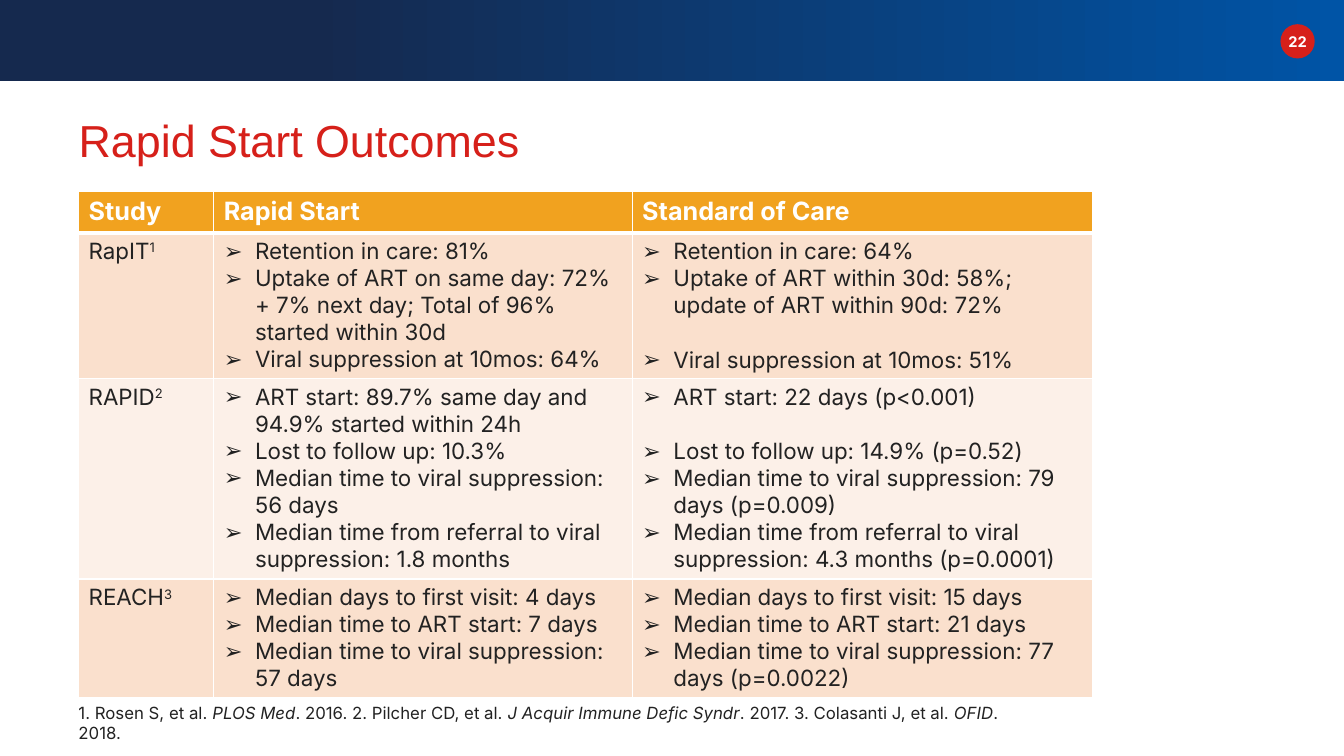
from lxml import etree
from pptx import Presentation
from pptx.dml.color import RGBColor
from pptx.enum.shapes import MSO_SHAPE
from pptx.enum.text import MSO_ANCHOR, PP_ALIGN
from pptx.oxml import parse_xml
from pptx.oxml.ns import nsdecls, qn
from pptx.util import Inches, Pt

RECT, OVAL = MSO_SHAPE.RECTANGLE, MSO_SHAPE.OVAL
MIDDLE, CENTER = MSO_ANCHOR.MIDDLE, PP_ALIGN.CENTER

RED, WHITE, INK, GOLD = "D6201A", "FFFFFF", "222222", "F1A21F"
BANDS = ["FAE0CD", "FCF0E8"]
STOPS = [(0.23, "15294E"), (1, "0054A6")]
TITLE = "Rapid Start Outcomes"
HEADS = ["Study", "Rapid Start", "Standard of Care"]
COLS = [1.34, 4.15, 4.57]
ROWS = [0.41, 1.44, 1.99, 1.17]
LINE = 19.5

STUDIES = [
    ("RapIT", "1",
     ["Retention in care: 81%",
      "Uptake of ART on same day: 72% + 7% next day; Total of 96% started within 30d",
      "Viral suppression at 10mos: 64%"],
     ["Retention in care: 64%",
      "Uptake of ART within 30d: 58%; update of ART within 90d: 72%",
      "Viral suppression at 10mos: 51%"]),
    ("RAPID", "2",
     ["ART start: 89.7% same day and 94.9% started within 24h",
      "Lost to follow up: 10.3%",
      "Median time to viral suppression: 56 days",
      "Median time from referral to viral suppression: 1.8 months"],
     ["ART start: 22 days (p<0.001)",
      "Lost to follow up: 14.9% (p=0.52)",
      "Median time to viral suppression: 79 days (p=0.009)",
      "Median time from referral to viral suppression: 4.3 months (p=0.0001)"]),
    ("REACH", "3",
     ["Median days to first visit: 4 days",
      "Median time to ART start: 7 days",
      "Median time to viral suppression: 57 days"],
     ["Median days to first visit: 15 days",
      "Median time to ART start: 21 days",
      "Median time to viral suppression: 77 days (p=0.0022)"]),
]
GAPS = {"Viral suppression at 10mos: 51%", "Lost to follow up: 14.9% (p=0.52)"}

CITES = [("1. Rosen S, et al. ", False), ("PLOS Med", True),
         (". 2016. 2. Pilcher CD, et al. ", False),
         ("J Acquir Immune Defic Syndr", True),
         (". 2017. 3. Colasanti J, et al. ", False),
         ("OFID", True), (". 2018.", False)]


def color(code):
    return RGBColor.from_string(code)


def add_run(para, text, size, code=INK, bold=False, italic=False, face="Inter"):
    run = para.add_run()
    run.text = text
    font = run.font
    font.name, font.size, font.bold, font.italic = face, Pt(size), bold, italic
    font.color.rgb = color(code)
    return run


def add_shape(kind, left, top, width, height):
    shape = slide.shapes.add_shape(
        kind, Inches(left), Inches(top), Inches(width), Inches(height))
    shape.shadow.inherit = False
    shape.line.fill.background()
    return shape


def add_bullet(para, text):
    props = para._p.get_or_add_pPr()
    props.set("marL", str(Inches(0.31)))
    props.set("indent", str(-Inches(0.31)))
    etree.SubElement(props, qn("a:buFont")).set("typeface", "Arial")
    etree.SubElement(props, qn("a:buChar")).set("char", "➢")
    if text in GAPS:
        para.space_before = Pt(LINE)
    add_run(para, text, 16)


def style_cell(cell, fill, row):
    props = cell._tc.get_or_add_tcPr()
    for side in "LRTB":
        thick = (row, side) in [(0, "B"), (1, "T")]
        width = Pt(3 if thick else 1)
        props.append(parse_xml(
            f'<a:ln{side} {nsdecls("a")} w="{width}"><a:solidFill>'
            f'<a:srgbClr val="{WHITE}"/></a:solidFill></a:ln{side}>'))
    cell.fill.solid()
    cell.fill.fore_color.rgb = color(fill)


deck = Presentation()
deck.slide_width, deck.slide_height = Inches(13.33), Inches(7.5)
slide = deck.slides.add_slide(deck.slide_layouts[5])

band = add_shape(RECT, 0, 0, 13.33, 0.8)
band.fill.gradient()
band.fill.gradient_angle = 0
for stop, (place, code) in zip(band.fill.gradient_stops, STOPS):
    stop.position = place
    stop.color.rgb = color(code)

badge = add_shape(OVAL, 12.7, 0.24, 0.34, 0.34)
badge.fill.solid()
badge.fill.fore_color.rgb = color(RED)
frame = badge.text_frame
frame.margin_left = frame.margin_right = frame.margin_top = frame.margin_bottom = 0
frame.word_wrap = False
frame.vertical_anchor = MIDDLE
frame.paragraphs[0].alignment = CENTER
add_run(frame.paragraphs[0], "22", 10.5, WHITE, bold=True)

title = slide.shapes.title
title.left, title.top = Inches(0.68), Inches(1.03)
title.width, title.height = Inches(11.5), Inches(0.71)
title.text_frame.vertical_anchor = MIDDLE
head = title.text_frame.paragraphs[0]
head.alignment = PP_ALIGN.LEFT
add_run(head, TITLE, 32, RED, face="Arial")

table = slide.shapes.add_table(
    len(ROWS), len(COLS), Inches(0.78), Inches(1.9),
    Inches(sum(COLS)), Inches(sum(ROWS))).table
table.horz_banding = False
for col, width in zip(table.columns, COLS):
    col.width = Inches(width)
for row, height in zip(table.rows, ROWS):
    row.height = Inches(height)

for c, text in enumerate(HEADS):
    cell = table.cell(0, c)
    style_cell(cell, GOLD, 0)
    add_run(cell.text_frame.paragraphs[0], text, 18, WHITE, bold=True)

for r, (name, note, *lists) in enumerate(STUDIES, 1):
    for c in range(len(COLS)):
        style_cell(table.cell(r, c), BANDS[(r - 1) % 2], r)
    para = table.cell(r, 0).text_frame.paragraphs[0]
    add_run(para, name, 16)
    mark = add_run(para, note, 16)
    mark._r.get_or_add_rPr().set("baseline", "30000")
    for c, items in enumerate(lists, 1):
        frame = table.cell(r, c).text_frame
        for i, text in enumerate(items):
            add_bullet(frame.add_paragraph() if i else frame.paragraphs[0], text)

notes = slide.shapes.add_textbox(Inches(0.68), Inches(6.92), Inches(9.78), Inches(0.3))
notes.text_frame.word_wrap = True
for text, slant in CITES:
    add_run(notes.text_frame.paragraphs[0], text, 12, italic=slant)

deck.save("out.pptx")
